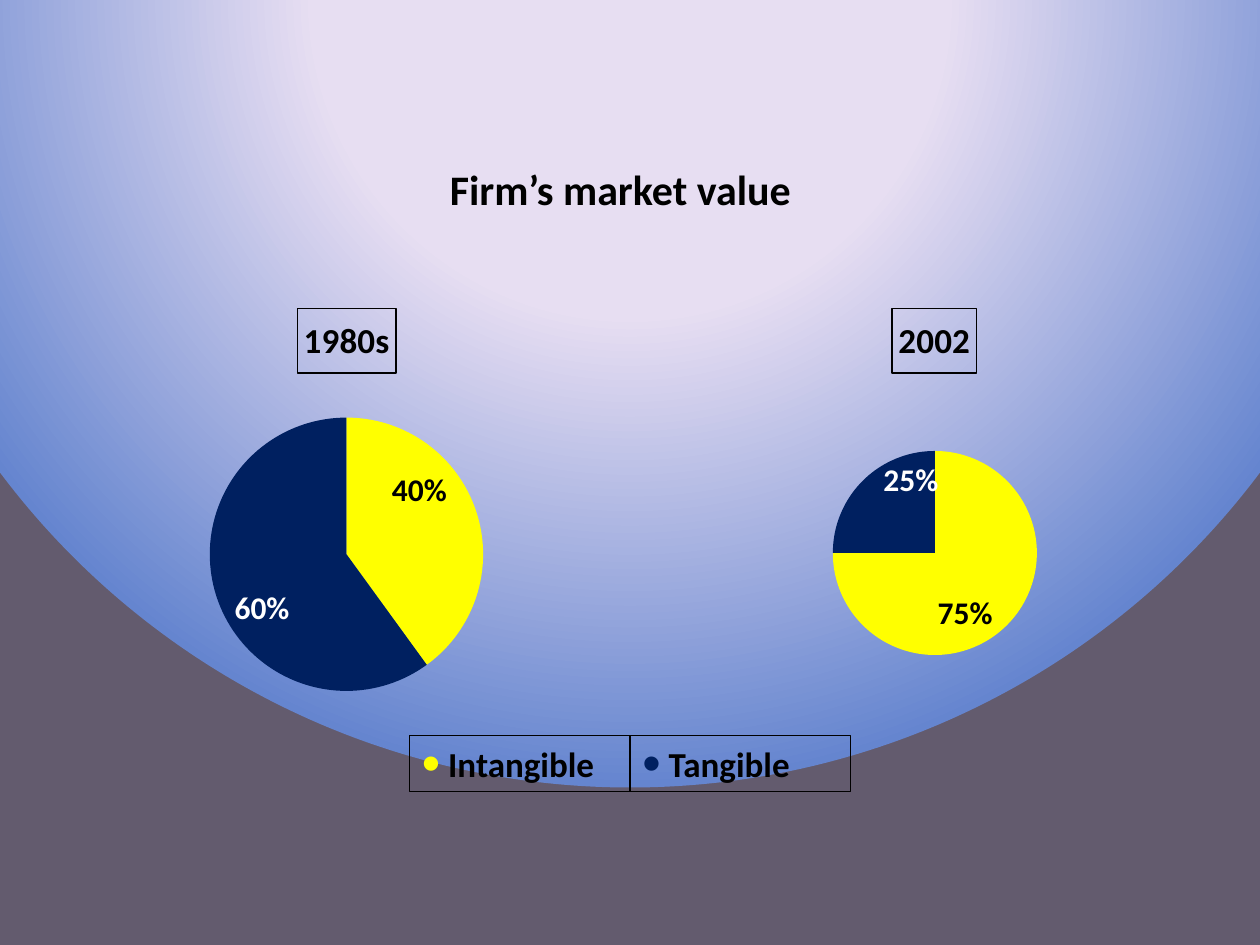
"""Build the slide comparing the make-up of a firm's market value in two periods."""
import math

from lxml import etree
from pptx import Presentation
from pptx import util as u
from pptx.chart.data import CategoryChartData
from pptx.dml.color import RGBColor
from pptx.enum import chart as ch
from pptx.enum import shapes, text
from pptx.oxml import parse_xml
from pptx.oxml.ns import nsdecls, qn

BLACK = RGBColor(0x00, 0x00, 0x00)
WHITE = RGBColor(0xFF, 0xFF, 0xFF)
YELLOW = RGBColor(0xFF, 0xFF, 0x00)
NAVY = RGBColor(0x00, 0x20, 0x60)
FONT = "Calibri"

TITLE = "Firm’s market value"
CATEGORIES = [("Intangible", YELLOW, BLACK), ("Tangible", NAVY, WHITE)]
PIES = [
    dict(title="1980s", values=(40, 60), box=(0.75, 2.33, 4, 3.51), center=(2.75, 4.4),
         diameter=2.17, heading=(2.36, 2.45), labels=((3.33, 3.89), (2.08, 4.83))),
    dict(title="2002", values=(75, 25), box=(5.42, 2.33, 4, 3.47), center=(7.42, 4.39),
         diameter=1.62, heading=(7.08, 2.45), labels=((7.66, 4.87), (7.23, 3.81))),
]
KEY_LEFT, KEY_TOP, KEY_W, KEY_H = 3.25, 5.84, 1.75, 0.44
GRADIENT = [(40, "E7DEF2"), (100, "6585CF"), (100, "635B6E")]


def set_font(font, size, color=BLACK):
    font.name, font.size, font.bold = FONT, u.Pt(size), True
    font.color.rgb = color


def add_run(p, words, size):
    r = p.add_run()
    r.text = words
    set_font(r.font, size)


def layout_xml(x, y, size=None, edge=False):
    parts = [("layoutTarget", "inner")] if size else []
    parts += [("xMode", "edge"), ("yMode", "edge")] if edge else []
    parts += [("x", f"{x:.4f}"), ("y", f"{y:.4f}")]
    parts += [("w", f"{size[0]:.4f}"), ("h", f"{size[1]:.4f}")] if size else []
    body = "".join(f'<c:{tag} val="{val}"/>' for tag, val in parts)
    return parse_xml(f'<c:layout {nsdecls("c")}><c:manualLayout>{body}</c:manualLayout></c:layout>')


def replace_layout(parent, layout, after=None):
    for old in parent.findall(qn("c:layout")):
        parent.remove(old)
    if after is None:
        parent.insert(0, layout)
    else:
        after.addnext(layout)


def set_background(s):
    stops = "".join(f'<a:gs pos="{pos * 1000}"><a:srgbClr val="{color}"/></a:gs>'
                    for pos, color in GRADIENT)
    bg = parse_xml(
        f'<p:bg {nsdecls("p", "a")}><p:bgPr><a:gradFill rotWithShape="1"><a:gsLst>{stops}</a:gsLst>'
        '<a:path path="circle"><a:fillToRect l="50000" t="-80000" r="50000" b="180000"/></a:path>'
        '</a:gradFill><a:effectLst/></p:bgPr></p:bg>')
    s.element.cSld.insert(0, bg)


def add_title(s):
    sp = s.shapes.title
    sp.left, sp.top, sp.width, sp.height = map(u.Inches, (3.47, 1.25, 3.03, 0.5))
    tf = sp.text_frame
    tf.word_wrap, tf.vertical_anchor = False, text.MSO_ANCHOR.TOP
    p = tf.paragraphs[0]
    p.alignment = text.PP_ALIGN.LEFT
    add_run(p, TITLE, 24)


def add_key(s, index, name, color):
    sp = s.shapes.add_shape(shapes.MSO_SHAPE.RECTANGLE, u.Inches(KEY_LEFT + index * KEY_W),
                            u.Inches(KEY_TOP), u.Inches(KEY_W), u.Inches(KEY_H))
    sp.shadow.inherit = False
    sp.fill.background()
    sp.line.color.rgb, sp.line.width = BLACK, u.Pt(0.75)
    tf = sp.text_frame
    tf.word_wrap, tf.vertical_anchor = True, text.MSO_ANCHOR.TOP
    p = tf.paragraphs[0]
    p.alignment = text.PP_ALIGN.LEFT
    pPr = p._p.get_or_add_pPr()
    etree.SubElement(etree.SubElement(pPr, qn("a:buClr")), qn("a:srgbClr"), val=str(color))
    etree.SubElement(pPr, qn("a:buSzPct"), val="150000")
    etree.SubElement(pPr, qn("a:buFont"), typeface="Arial")
    etree.SubElement(pPr, qn("a:buChar"), char="•")
    add_run(p, " " + name, 20)


def add_pie(s, pie):
    left, top, width, height = pie["box"]
    cx, cy = pie["center"]
    radius = pie["diameter"] / 2
    data = CategoryChartData()
    data.categories = [name for name, _, _ in CATEGORIES]
    data.add_series("Series 1", pie["values"])
    chart = s.shapes.add_chart(ch.XL_CHART_TYPE.PIE, *map(u.Inches, pie["box"]), data).chart
    chart.has_legend = False
    chart.font.name, chart.font.size = FONT, u.Pt(10)
    chart.font.color.rgb = BLACK
    root = chart._chartSpace.chart
    root.addnext(parse_xml(f'<c:spPr {nsdecls("c", "a")}><a:noFill/><a:ln><a:noFill/></a:ln></c:spPr>'))

    chart.has_title = True
    heading = chart.chart_title
    add_run(heading.text_frame.paragraphs[0], pie["title"], 20)
    heading.format.line.color.rgb, heading.format.line.width = BLACK, u.Pt(0.75)
    hx, hy = pie["heading"]
    title = root.find(qn("c:title"))
    replace_layout(title, layout_xml((hx - left) / width, (hy - top) / height, edge=True),
                   title.find(qn("c:tx")))
    size = (2 * radius / width, 2 * radius / height)
    replace_layout(root.plotArea, layout_xml((cx - radius - left) / width,
                                             (cy - radius - top) / height, size, edge=True))

    plot = chart.plots[0]
    plot.vary_by_categories = True
    plot.has_data_labels = True
    labels = plot.data_labels
    labels.show_percentage, labels.show_value = True, False
    labels.number_format, labels.number_format_is_linked = "0%", False
    total, start = sum(pie["values"]), 0
    series = plot.series[0]
    for i, (_, color, label_color) in enumerate(CATEGORIES):
        point = series.points[i]
        point.format.fill.solid()
        point.format.fill.fore_color.rgb = color
        set_font(point.data_label.font, 18, label_color)
        point.data_label.position = ch.XL_LABEL_POSITION.CENTER
        angle = 2 * math.pi * (start + pie["values"][i] / 2) / total
        start += pie["values"][i]
        lx, ly = pie["labels"][i]
        dx = lx - cx - radius / 2 * math.sin(angle)
        dy = ly - cy + radius / 2 * math.cos(angle)
        label = series._element.find(qn("c:dLbls")).findall(qn("c:dLbl"))[i]
        replace_layout(label, layout_xml(dx / width, dy / height), label.find(qn("c:idx")))
        label.find(qn("c:showVal")).set("val", "0")
        label.find(qn("c:showPercent")).set("val", "1")
    for leader in series._element.iter(qn("c:showLeaderLines")):
        leader.set("val", "0")


def main():
    prs = Presentation()
    prs.slide_width, prs.slide_height = u.Inches(10), u.Inches(7.5)
    s = prs.slides.add_slide(prs.slide_layouts[5])
    set_background(s)
    add_title(s)
    for pie in PIES:
        add_pie(s, pie)
    for i, (name, color, _) in enumerate(CATEGORIES):
        add_key(s, i, name, color)
    prs.save("out.pptx")


if __name__ == "__main__":
    main()
